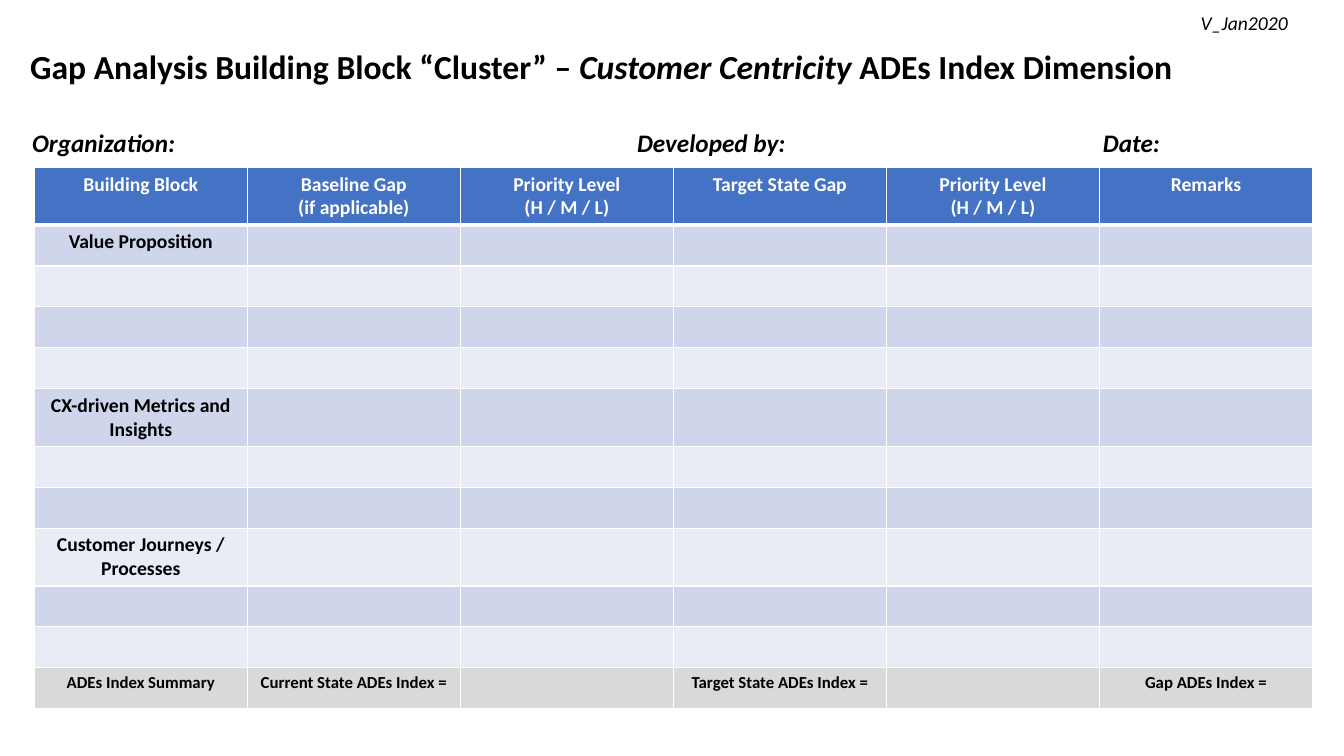
from lxml import etree
from pptx import Presentation
from pptx import util as u
from pptx.dml.color import RGBColor
from pptx.enum import text as t
from pptx.oxml.ns import qn

HUES = {
    "ink": "000000",
    "white": "FFFFFF",
    "head": "4472C4",
    "dark": "CFD5EA",
    "light": "E9EBF5",
    "total": "D9D9D9",
}
HEADS = [
    "Building Block",
    "Baseline Gap\n(if applicable)",
    "Priority Level\n(H / M / L)",
    "Target State Gap",
    "Priority Level\n(H / M / L)",
    "Remarks",
]
BLOCKS = {
    1: "Value Proposition",
    5: "CX-driven Metrics and Insights",
    8: "Customer Journeys / Processes",
}
TOTALS = [
    "ADEs Index Summary",
    "Current State ADEs Index =",
    "",
    "Target State ADEs Index =",
    "",
    "Gap ADEs Index =",
]
ROWS = [HEADS] + [[BLOCKS.get(n, "")] + [""] * 5 for n in range(1, 11)] + [TOTALS]
TALL = {0, 5, 8}


def style(run, size, hue="ink", bold=False, italic=False):
    look = {"name": "Calibri", "size": u.Pt(size), "bold": bold, "italic": italic}
    for key, value in look.items():
        setattr(run.font, key, value)
    run.font.color.rgb = RGBColor.from_string(HUES[hue])


def place(shape, box):
    for key, value in zip(("left", "top", "width", "height"), box):
        setattr(shape, key, u.Inches(value))


def frame(shape):
    look = {
        "word_wrap": False,
        "auto_size": t.MSO_AUTO_SIZE.NONE,
        "vertical_anchor": t.MSO_ANCHOR.TOP,
    }
    for key, value in look.items():
        setattr(shape.text_frame, key, value)
    return shape.text_frame.paragraphs[0]


def add_title(slide, box):
    place(slide.shapes.title, box)
    para = frame(slide.shapes.title)
    para.alignment = t.PP_ALIGN.LEFT
    parts = [
        ("Gap Analysis Building Block “Cluster” – ", False),
        ("Customer Centricity ", True),
        ("ADEs Index Dimension", False),
    ]
    for words, slant in parts:
        run = para.add_run()
        run.text = words
        style(run, 24, bold=True, italic=slant)


def add_line(slide, box, words, size, bold=False, tabs=()):
    para = frame(slide.shapes.add_textbox(*map(u.Inches, box)))
    run = para.add_run()
    run.text = words
    style(run, size, bold=bold, italic=True)
    if tabs:
        stops = etree.SubElement(para._p.get_or_add_pPr(), qn("a:tabLst"))
        for stop in tabs:
            etree.SubElement(stops, qn("a:tab"), pos=str(u.Inches(stop)), algn="l")


def edge(cell, row):
    props = cell._tc.get_or_add_tcPr()
    widths = {"L": 1, "R": 1, "T": 3 if row == 1 else 1, "B": 3 if row == 0 else 1}
    for side, width in widths.items():
        line = etree.SubElement(props, qn("a:ln" + side), w=str(u.Pt(width)))
        fill = etree.SubElement(line, qn("a:solidFill"))
        etree.SubElement(fill, qn("a:srgbClr"), val=HUES["white"])


def band(row):
    if row == 0:
        return "head"
    if row == len(ROWS) - 1:
        return "total"
    return "dark" if row % 2 else "light"


def fill_cell(cell, row, words):
    edge(cell, row)
    cell.fill.solid()
    cell.fill.fore_color.rgb = RGBColor.from_string(HUES[band(row)])
    if not words:
        return
    cell.text_frame.text = words
    size = 12 if row == len(ROWS) - 1 else 14
    for para in cell.text_frame.paragraphs:
        para.alignment = t.PP_ALIGN.CENTER
        style(para.runs[0], size, "ink" if row else "white", bold=True)


def add_grid(slide, box):
    wide, high = box[2:]
    grid = slide.shapes.add_table(len(ROWS), len(HEADS), *map(u.Inches, box)).table
    tall = 0.57
    short = (high - tall * len(TALL)) / (len(ROWS) - len(TALL))
    for col in grid.columns:
        col.width = u.Inches(wide / len(HEADS))
    for row, items in enumerate(ROWS):
        grid.rows[row].height = u.Inches(tall if row in TALL else short)
        for col, words in enumerate(items):
            fill_cell(grid.cell(row, col), row, words)


def main():
    deck = Presentation()
    deck.slide_width = u.Inches(13.33)
    deck.slide_height = u.Inches(7.5)
    slide = deck.slides.add_slide(deck.slide_layouts[5])
    add_title(slide, (0.2, 0.41, 11.64, 0.5))
    add_grid(slide, (0.34, 1.66, 12.68, 5.35))
    add_line(slide, (0.22, 1.21, 12.72, 0.4), "Organization:\tDeveloped by:\tDate:",
             18, bold=True, tabs=(6, 10.62))
    add_line(slide, (11.81, 0.06, 1.08, 0.34), "V_Jan2020", 14)
    deck.save("out.pptx")


if __name__ == "__main__":
    main()
